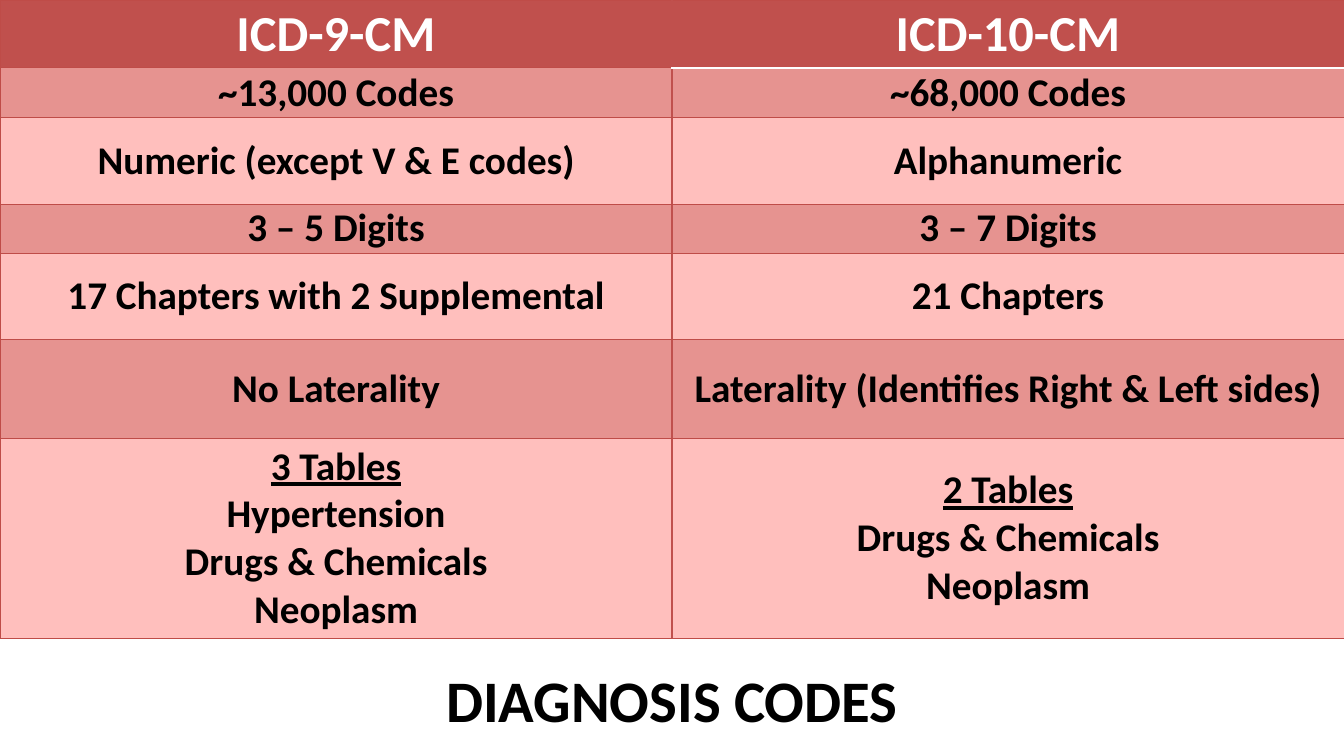
from dataclasses import dataclass

from lxml.etree import SubElement
from pptx import Presentation
from pptx.dml.color import RGBColor
from pptx.enum.text import MSO_ANCHOR, PP_ALIGN
from pptx.oxml.ns import qn
from pptx.util import Cm, Pt


@dataclass(frozen=True)
class Theme:
    font: str = "Calibri"
    header_fill: str = "C0504D"
    dark_band: str = "E69390"
    light_band: str = "FFBFBD"
    rule: str = "BF4C48"
    white: str = "FFFFFF"
    black: str = "000000"
    header_size: int = 36
    body_size: int = 28
    title_size: int = 42
    thin: float = 0.75
    thick: float = 2


THEME = Theme()
SLIDE_WIDTH, SLIDE_HEIGHT = 33.87, 19.05
ROW_HEIGHTS = [1.71, 1.25, 2.18, 1.24, 2.18, 2.5, 5.02]
COMPARISON = [
    ("ICD-9-CM", "ICD-10-CM"),
    ("~13,000 Codes", "~68,000 Codes"),
    ("Numeric (except V & E codes)", "Alphanumeric"),
    ("3 – 5 Digits", "3 – 7 Digits"),
    ("17 Chapters with 2 Supplemental", "21 Chapters"),
    ("No Laterality", "Laterality (Identifies Right & Left sides)"),
    ("3 Tables\nHypertension\nDrugs & Chemicals\nNeoplasm",
     "2 Tables\nDrugs & Chemicals\nNeoplasm"),
]


def write_text(text_frame, text, size, color):
    """Write centred bold lines; the first of several is an underlined heading."""
    text_frame.text = text
    paragraphs = text_frame.paragraphs
    for index, paragraph in enumerate(paragraphs):
        paragraph.alignment = PP_ALIGN.CENTER
        font_format = {
            "name": THEME.font, "size": Pt(size), "bold": True,
            "underline": len(paragraphs) > 1 and index == 0,
        }
        for run in paragraph.runs:
            for name, value in font_format.items():
                setattr(run.font, name, value)
            run.font.color.rgb = RGBColor.from_string(color)


def set_borders(cell, row, column):
    thin = (THEME.rule, THEME.thin)
    centre = (THEME.header_fill, THEME.thick)
    under_header = (THEME.white, THEME.thick) if column == 1 else thin
    borders = {
        "a:lnL": centre if column == 1 else thin,
        "a:lnR": centre if column == 0 else thin,
        "a:lnT": under_header if row == 1 else thin,
        "a:lnB": under_header if row == 0 else thin,
    }
    properties = cell._tc.get_or_add_tcPr()
    for tag, (color, width) in borders.items():
        line = SubElement(properties, qn(tag), w=str(Pt(width)))
        fill = SubElement(line, qn("a:solidFill"))
        SubElement(fill, qn("a:srgbClr"), val=color)


def add_comparison_table(slide, left, top, width, row_heights):
    frame = slide.shapes.add_table(
        len(COMPARISON), 2, Cm(left), Cm(top), Cm(width), Cm(sum(row_heights)))
    table = frame.table
    table.horz_banding = False
    for column in table.columns:
        column.width = Cm(width / 2)
    cell_format = {
        "vertical_anchor": MSO_ANCHOR.MIDDLE,
        "margin_left": Cm(0.18), "margin_right": Cm(0.18),
        "margin_top": 0, "margin_bottom": 0,
    }
    for row, texts in enumerate(COMPARISON):
        table.rows[row].height = Cm(row_heights[row])
        if row == 0:
            fill, color, size = THEME.header_fill, THEME.white, THEME.header_size
        else:
            fill = THEME.dark_band if row % 2 else THEME.light_band
            color, size = THEME.black, THEME.body_size
        for column, text in enumerate(texts):
            cell = table.cell(row, column)
            for name, value in cell_format.items():
                setattr(cell, name, value)
            set_borders(cell, row, column)
            cell.fill.solid()
            cell.fill.fore_color.rgb = RGBColor.from_string(fill)
            write_text(cell.text_frame, text, size, color)


def add_title(slide, left, top, width, height):
    box = slide.shapes.add_textbox(Cm(left), Cm(top), Cm(width), Cm(height))
    box.text_frame.word_wrap = True
    write_text(box.text_frame, "DIAGNOSIS CODES", THEME.title_size, THEME.black)


def main():
    presentation = Presentation()
    presentation.slide_width = Cm(SLIDE_WIDTH)
    presentation.slide_height = Cm(SLIDE_HEIGHT)
    slide = presentation.slides.add_slide(presentation.slide_layouts[6])
    add_comparison_table(slide, 0, 0, SLIDE_WIDTH, ROW_HEIGHTS)
    add_title(slide, 0, 16.61, SLIDE_WIDTH, 2.06)
    presentation.save("out.pptx")


if __name__ == "__main__":
    main()
